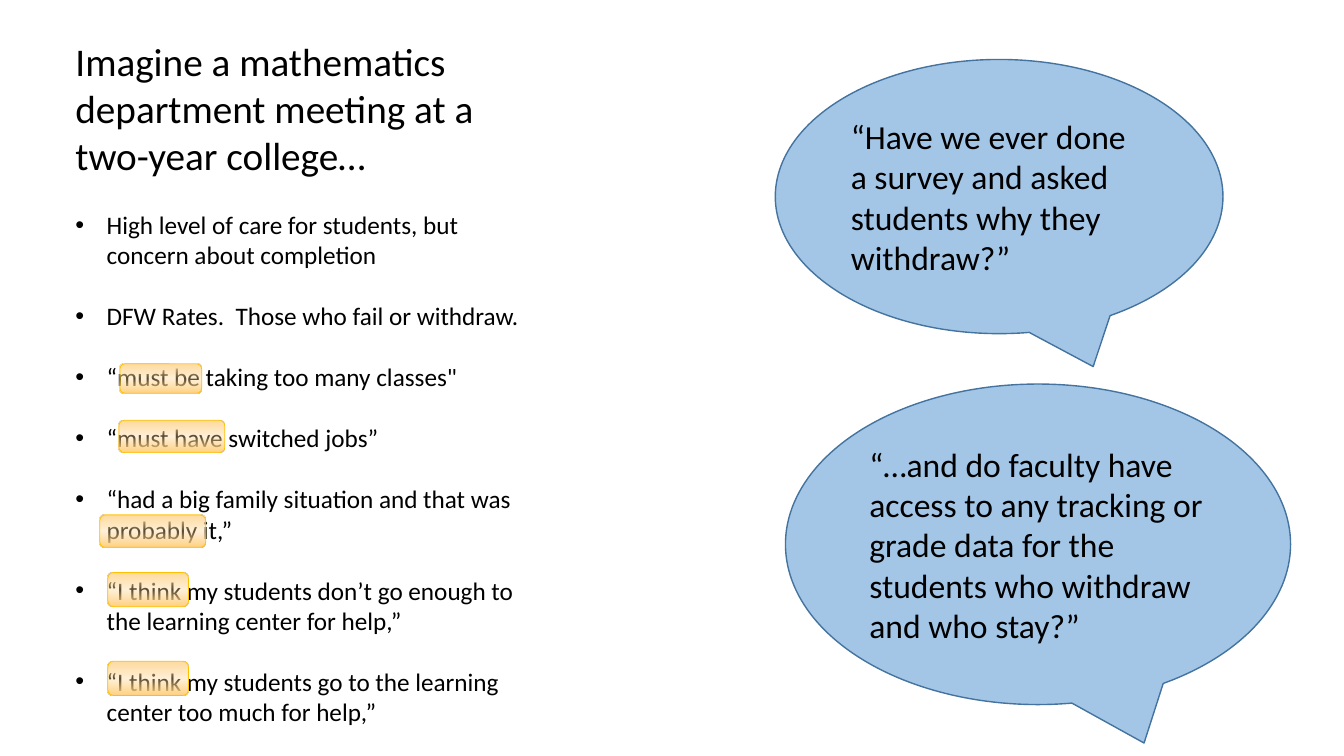
from lxml.etree import SubElement
from pptx import Presentation
from pptx.dml.color import RGBColor
from pptx.enum.shapes import MSO_SHAPE
from pptx.enum.text import MSO_ANCHOR, MSO_AUTO_SIZE, PP_ALIGN
from pptx.oxml.ns import qn
from pptx.util import Inches, Pt

BLACK = RGBColor(0x00, 0x00, 0x00)
BLUE = RGBColor(0x5B, 0x9B, 0xD5)
BLUE_LINE = RGBColor(0x43, 0x73, 0x9E)
GOLD_LINE = RGBColor(0xFF, 0xC0, 0x00)
GOLD_STOPS = [(0, "FFDB9E", 100), (50, "FFD590", 34), (100, "FFD07C", 100)]
FONT = "Calibri"
BULLET_INDENT = 0.31

TITLE = "Imagine a mathematics department meeting at a two-year college…"
BULLETS = [
    "High level of care for students, but concern about completion",
    "DFW Rates.  Those who fail or withdraw.",
    "“must be taking too many classes\"",
    "“must have switched jobs”",
    "“had a big family situation and that was probably it,”",
    "“I think my students don’t go enough to the learning center for help,”",
    "“I think my students go to the learning center too much for help,”",
]
# Hedging words: left, top, width, height, measured from the notes box
HIGHLIGHTS = [
    (0.54, 3.29, 0.81, 0.29),
    (0.53, 3.85, 1.05, 0.32),
    (0.34, 4.79, 1.05, 0.32),
    (0.42, 5.36, 0.80, 0.34),
    (0.42, 6.24, 0.80, 0.34),
]


def write(p, text, size, color=BLACK, before=0, bullet=False):
    p.alignment = PP_ALIGN.LEFT
    p.space_before = Pt(before)
    r = p.add_run()
    r.text = text
    r.font.name, r.font.size = FONT, Pt(size)
    r.font.color.rgb = color
    if bullet:
        pPr = p._p.get_or_add_pPr()
        pPr.set("marL", str(Inches(BULLET_INDENT)))
        pPr.set("indent", str(-Inches(BULLET_INDENT)))
        SubElement(pPr, qn("a:buFont")).set("typeface", "Arial")
        SubElement(pPr, qn("a:buChar")).set("char", "•")


def set_alpha(color_el, percent):
    SubElement(color_el, qn("a:alpha")).set("val", str(percent * 1000))


def add_outlined(slide, kind, box, line, width):
    sp = slide.shapes.add_shape(kind, *map(Inches, box))
    sp.shadow.inherit = False
    sp.line.color.rgb = line
    sp.line.width = Pt(width)
    return sp


def add_notes_column(slide, box):
    """Heading and bulleted remarks in one text box."""
    tf = slide.shapes.add_textbox(*map(Inches, box)).text_frame
    tf.word_wrap = True
    tf.auto_size = MSO_AUTO_SIZE.SHAPE_TO_FIT_TEXT
    write(tf.paragraphs[0], TITLE, 28)
    for text in BULLETS:
        write(tf.add_paragraph(), text, 18, before=22, bullet=True)


def add_highlights(slide, box):
    """Translucent gold markers over the hedging words."""
    left, top = box[:2]
    for x, y, w, h in HIGHLIGHTS:
        sp = add_outlined(slide, MSO_SHAPE.ROUNDED_RECTANGLE,
                          (left + x, top + y, w, h), GOLD_LINE, 0.5)
        sp.fill.gradient()
        sp.fill.gradient_angle = 270
        stops = sp._element.spPr.find(qn("a:gradFill")).find(qn("a:gsLst"))
        for gs in list(stops):
            stops.remove(gs)
        for pos, color, alpha in GOLD_STOPS:
            gs = SubElement(stops, qn("a:gs"))
            gs.set("pos", str(pos * 1000))
            clr = SubElement(gs, qn("a:srgbClr"))
            clr.set("val", color)
            if alpha < 100:
                set_alpha(clr, alpha)


def add_bubble(slide, box, text):
    """Speech bubble with its tail at the lower right."""
    sp = add_outlined(slide, MSO_SHAPE.OVAL_CALLOUT, box, BLUE_LINE, 1)
    sp.adjustments[0], sp.adjustments[1] = 0.21, 0.62
    sp.fill.solid()
    sp.fill.fore_color.rgb = BLUE
    set_alpha(sp._element.spPr.find(qn("a:solidFill"))[0], 56)
    tf = sp.text_frame
    tf.word_wrap = True
    tf.vertical_anchor = MSO_ANCHOR.MIDDLE
    write(tf.paragraphs[0], text, 24)


def main():
    prs = Presentation()
    prs.slide_width, prs.slide_height = Inches(13.33), Inches(7.5)
    slide = prs.slides.add_slide(prs.slide_layouts[6])

    notes_box = (0.65, 0.32, 4.63, 6.97)
    add_notes_column(slide, notes_box)
    add_bubble(slide, (7.69, 0.59, 4.44, 2.72),
               "“Have we ever done a survey and asked students why they withdraw?”")
    add_bubble(slide, (7.79, 3.81, 5.01, 3.18),
               "“…and do faculty have access to any tracking or grade data "
               "for the students who withdraw and who stay?”")
    add_highlights(slide, notes_box)

    prs.save("out.pptx")


if __name__ == "__main__":
    main()
